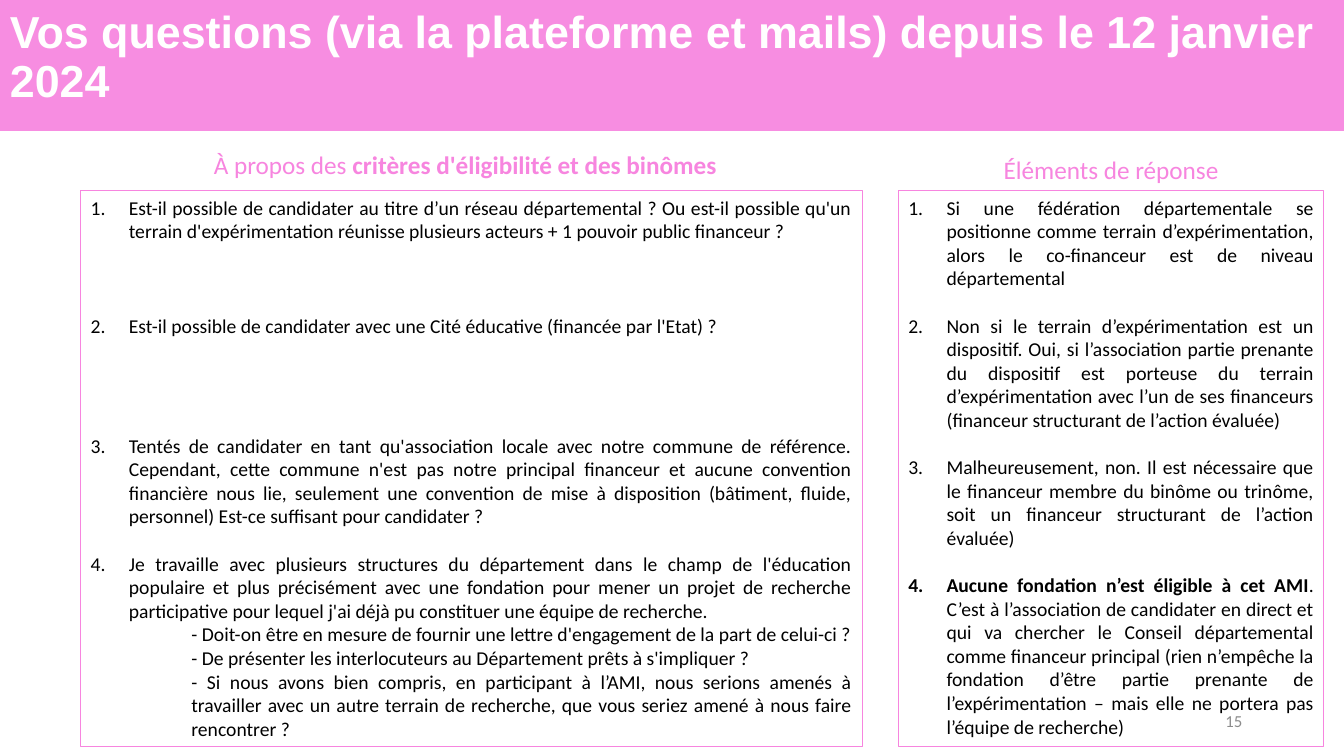
from lxml.etree import SubElement
from pptx import Presentation
from pptx.dml.color import RGBColor
from pptx.enum.shapes import MSO_SHAPE
from pptx.enum.text import MSO_ANCHOR, PP_ALIGN
from pptx.oxml.ns import qn
from pptx.util import Emu, Pt

EMU_PER_PX = 9144
PINK = "F785DF"
BLACK = "000000"
WHITE = "FFFFFF"
GREY = "8C8C8C"
LINE_HEIGHT = 17.1

QUESTIONS_LEFT, QUESTIONS_WIDTH = 80, 775
ANSWERS_LEFT, ANSWERS_WIDTH = 891, 422
PANEL_TOP, PANEL_HEIGHT = 189, 552

QUESTIONS = [
    ("Est-il possible de candidater au titre d’un réseau départemental ? Ou est-il possible qu'un "
     "terrain d'expérimentation réunisse plusieurs acteurs + 1 pouvoir public financeur ?", 3),
    ("Est-il possible de candidater avec une Cité éducative (financée par l'Etat) ?", 4),
    ("Tentés de candidater en tant qu'association locale avec notre commune de référence. "
     "Cependant, cette commune n'est pas notre principal financeur et aucune convention "
     "financière nous lie, seulement une convention de mise à disposition (bâtiment, fluide, "
     "personnel) Est-ce suffisant pour candidater ?", 1),
    ("Je travaille avec plusieurs structures du département dans le champ de l'éducation "
     "populaire et plus précisément avec une fondation pour mener un projet de recherche "
     "participative pour lequel j'ai déjà pu constituer une équipe de recherche.", 0),
]
DETAILS = [
    "- Doit-on être en mesure de fournir une lettre d'engagement de la part de celui-ci ?",
    "- De présenter les interlocuteurs au Département prêts à s'impliquer ?",
    "- Si nous avons bien compris, en participant à l’AMI, nous serions amenés à travailler avec "
    "un autre terrain de recherche, que vous seriez amené à nous faire rencontrer ?",
]
ANSWERS = [
    ("Si une fédération départementale se positionne comme terrain d’expérimentation, alors le "
     "co-financeur est de niveau départemental", 1),
    ("Non si le terrain d’expérimentation est un dispositif. Oui, si l’association partie "
     "prenante du dispositif est porteuse du terrain d’expérimentation avec l’un de ses "
     "financeurs (financeur structurant de l’action évaluée)", 1),
    ("Malheureusement, non. Il est nécessaire que le financeur membre du binôme ou trinôme, soit "
     "un financeur structurant de l’action évaluée)", 1),
]
FINAL_ANSWER_LEAD = "Aucune fondation n’est éligible à cet AMI"
FINAL_ANSWER = (
    ". C’est à l’association de candidater en direct et qui va chercher le Conseil départemental "
    "comme financeur principal (rien n’empêche la fondation d’être partie prenante de "
    "l’expérimentation – mais elle ne portera pas l’équipe de recherche)")


def px(value):
    return Emu(value * EMU_PER_PX)


def color(value):
    return RGBColor.from_string(value)


class SlideBuilder:
    def __init__(self, presentation, font="Calibri"):
        self.font = font
        self.slide = presentation.slides.add_slide(presentation.slide_layouts[6])

    def rectangle(self, left, top, width, height):
        shape = self.slide.shapes.add_shape(
            MSO_SHAPE.RECTANGLE, px(left), px(top), px(width), px(height))
        shape.shadow.inherit = False
        return shape

    def band(self, left, top, width, height, fill, opacity):
        shape = self.rectangle(left, top, width, height)
        shape.fill.solid()
        shape.fill.fore_color.rgb = color(fill)
        shape.line.fill.background()
        fill_color = shape.fill._xPr.find(qn("a:solidFill"))[0]
        SubElement(fill_color, qn("a:alpha"), val=str(opacity * 1000))

    def panel(self, left, top, width, height, outline):
        shape = self.rectangle(left, top, width, height)
        shape.fill.background()
        shape.line.color.rgb = color(outline)
        shape.line.width = Pt(0.75)
        shape.text_frame.word_wrap = True
        shape.text_frame.vertical_anchor = MSO_ANCHOR.TOP
        return shape.text_frame

    def text(self, left, top, width, height, parts, size, ink, align,
             font=None, anchor=MSO_ANCHOR.TOP):
        box = self.slide.shapes.add_textbox(px(left), px(top), px(width), px(height))
        box.text_frame.word_wrap = True
        box.text_frame.vertical_anchor = anchor
        paragraph = box.text_frame.paragraphs[0]
        paragraph.alignment = align
        self.runs(paragraph, parts, size, ink, font)
        return paragraph

    def runs(self, paragraph, parts, size, ink, font=None):
        for words, bold in parts:
            run = paragraph.add_run()
            run.text = words
            run.font.name = font or self.font
            run.font.size = Pt(size)
            run.font.bold = bold
            run.font.color.rgb = color(ink)

    def item(self, frame, parts, margin, gap=0, numbered=False):
        first = frame.paragraphs[0]
        paragraph = frame.add_paragraph() if first.runs else first
        paragraph.alignment = PP_ALIGN.JUSTIFY
        paragraph.space_after = Pt(gap * LINE_HEIGHT)
        properties = paragraph._p.get_or_add_pPr()
        properties.set("marL", str(px(margin)))
        properties.set("indent", str(px(-margin if numbered else 0)))
        if numbered:
            SubElement(properties, qn("a:buFont"), typeface="+mj-lt")
            SubElement(properties, qn("a:buAutoNum"), type="arabicPeriod")
        self.runs(paragraph, parts, 14, BLACK)


def main():
    presentation = Presentation()
    presentation.slide_width = px(1333)
    presentation.slide_height = px(750)
    builder = SlideBuilder(presentation)

    builder.band(0, 0, 1333, 130, PINK, 93)
    title = builder.text(
        0, 2, 1333, 112,
        [("Vos questions (via la plateforme et mails) depuis le 12 janvier 2024", True)],
        32, WHITE, PP_ALIGN.LEFT, "Arial", MSO_ANCHOR.MIDDLE)
    title.line_spacing = 0.9
    builder.text(942, 695, 300, 40, [("15", False)], 12, GREY, PP_ALIGN.RIGHT,
                 anchor=MSO_ANCHOR.MIDDLE)

    questions = builder.panel(QUESTIONS_LEFT, PANEL_TOP, QUESTIONS_WIDTH, PANEL_HEIGHT, PINK)
    for words, gap in QUESTIONS:
        builder.item(questions, [(words, False)], 38, gap, numbered=True)
    for words in DETAILS:
        builder.item(questions, [(words, False)], 100)

    answers = builder.panel(ANSWERS_LEFT, PANEL_TOP, ANSWERS_WIDTH, PANEL_HEIGHT, PINK)
    for words, gap in ANSWERS:
        builder.item(answers, [(words, False)], 38, gap, numbered=True)
    builder.item(answers, [(FINAL_ANSWER_LEAD, True), (FINAL_ANSWER, False)], 38, numbered=True)

    builder.text(QUESTIONS_LEFT - 6, 143, QUESTIONS_WIDTH, 40,
                 [("À propos des ", False), ("critères d'éligibilité et des binômes", True)],
                 18, PINK, PP_ALIGN.CENTER)
    builder.text(ANSWERS_LEFT, 148, ANSWERS_WIDTH, 40, [("Éléments de réponse", False)],
                 18, PINK, PP_ALIGN.CENTER)

    presentation.save("out.pptx")


if __name__ == "__main__":
    main()
